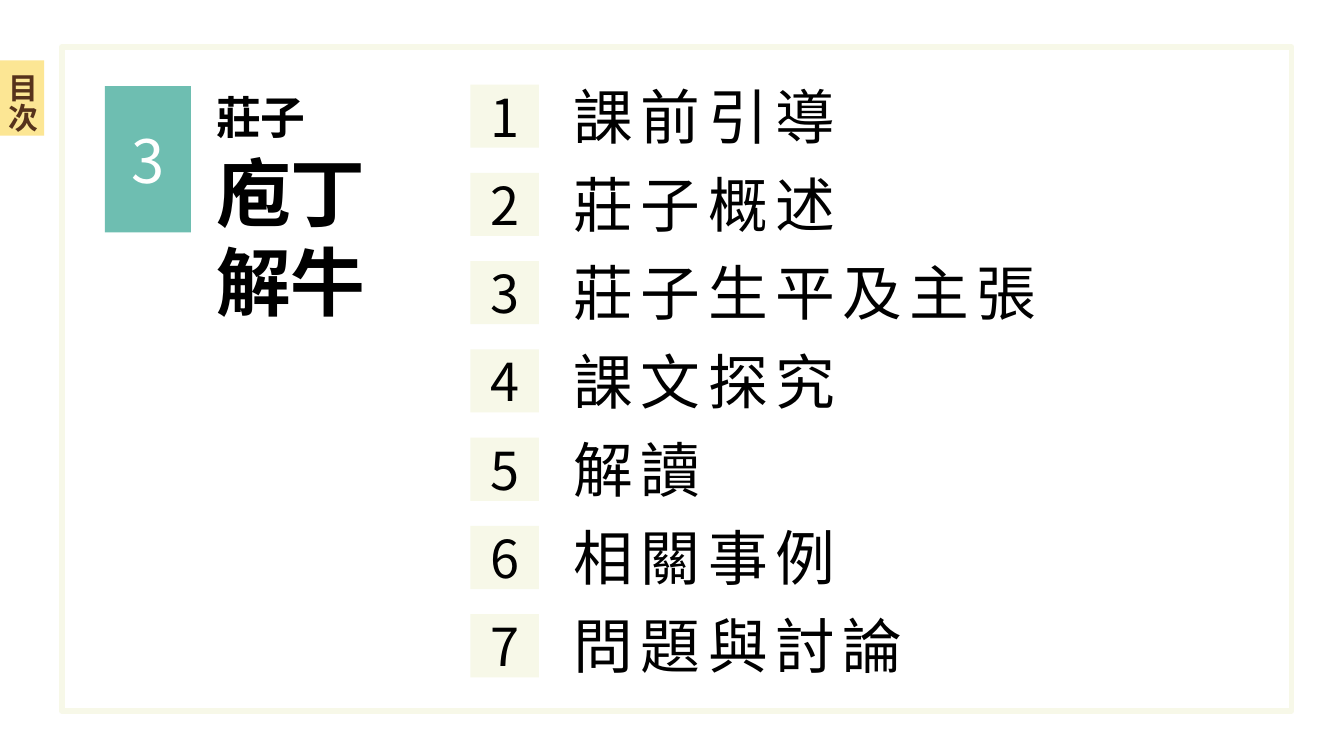
"""Build the contents slide for the Zhuangzi lesson."""
from pptx import Presentation
from pptx.dml.color import RGBColor
from pptx.enum import shapes, text
from pptx.oxml import ns
from pptx.util import Inches, Pt
from lxml import etree

FONT = "Noto Sans CJK SC"
BLACK = RGBColor(0x00, 0x00, 0x00)
WHITE = RGBColor(0xFF, 0xFF, 0xFF)
CREAM = RGBColor(0xF7, 0xF8, 0xE8)
YELLOW = RGBColor(0xFC, 0xE6, 0x94)
BROWN = RGBColor(0x56, 0x32, 0x1B)
TEAL = RGBColor(0x6E, 0xBE, 0xB1)
LEFT, CENTER = text.PP_ALIGN.LEFT, text.PP_ALIGN.CENTER
TOP, MIDDLE = text.MSO_ANCHOR.TOP, text.MSO_ANCHOR.MIDDLE


def add_panel(page, left, top, width, height, fill):
    panel = page.shapes.add_shape(
        shapes.MSO_SHAPE.RECTANGLE,
        Inches(left), Inches(top), Inches(width), Inches(height))
    panel.shadow.inherit = False
    panel.fill.solid()
    panel.fill.fore_color.rgb = fill
    panel.line.fill.background()
    return panel


def write(box, words, size, color=BLACK, bold=False, align=LEFT, anchor=MIDDLE, spacing=0):
    frame = box.text_frame
    frame.text = words
    frame.word_wrap = True
    frame.auto_size = text.MSO_AUTO_SIZE.NONE
    frame.vertical_anchor = anchor
    para = frame.paragraphs[0]
    para.alignment = align
    para.font.name = FONT
    para.font.size = Pt(size)
    para.font.bold = bold
    para.font.color.rgb = color
    style = para._p.pPr.find(ns.qn("a:defRPr"))
    style.set("spc", str(spacing * 100))
    etree.SubElement(style, ns.qn("a:ea"), typeface=FONT)
    return frame


deck = Presentation()
deck.slide_width = Inches(10)
deck.slide_height = deck.slide_width * 9 // 16
page = deck.slides.add_slide(deck.slide_layouts[5])

border = add_panel(page, 0.46, 0.35, 9.15, 4.94, WHITE)
border.line.color.rgb = CREAM
border.line.width = Pt(3)

tab = add_panel(page, 0, 0.45, 0.33, 0.56, YELLOW)
tab_frame = write(tab, "目次", 16, BROWN, bold=True)
tab_frame.word_wrap = False
tab_frame._txBody.bodyPr.set("vert", "eaVert")

author = page.shapes.add_textbox(Inches(1.51), Inches(0.62), Inches(1.32), Inches(0.5))
write(author, "莊子", 24, bold=True, anchor=TOP)

title = page.shapes.title
title.left, title.top = Inches(1.51), Inches(1.04)
title.width, title.height = Inches(1.37), Inches(1.45)
write(title, "庖丁解牛", 40, bold=True, anchor=TOP)
page.shapes._spTree.append(title._element)

lesson = add_panel(page, 0.78, 0.64, 0.64, 1.09, TEAL)
write(lesson, "3", 32, WHITE, align=CENTER)

topics = ["課前引導", "莊子概述", "莊子生平及主張", "課文探究", "解讀", "相關事例", "問題與討論"]
ROW_TOP, ROW_PITCH = 0.54, 3.94 / 6
for row, topic in enumerate(topics):
    top = ROW_TOP + row * ROW_PITCH
    label = page.shapes.add_textbox(Inches(4.17), Inches(top), Inches(4.5), Inches(0.64))
    write(label, topic, 32, spacing=4)
    badge = add_panel(page, 3.5, top + 0.09, 0.51, 0.47, CREAM)
    write(badge, str(row + 1), 28, align=CENTER)

deck.save("out.pptx")
